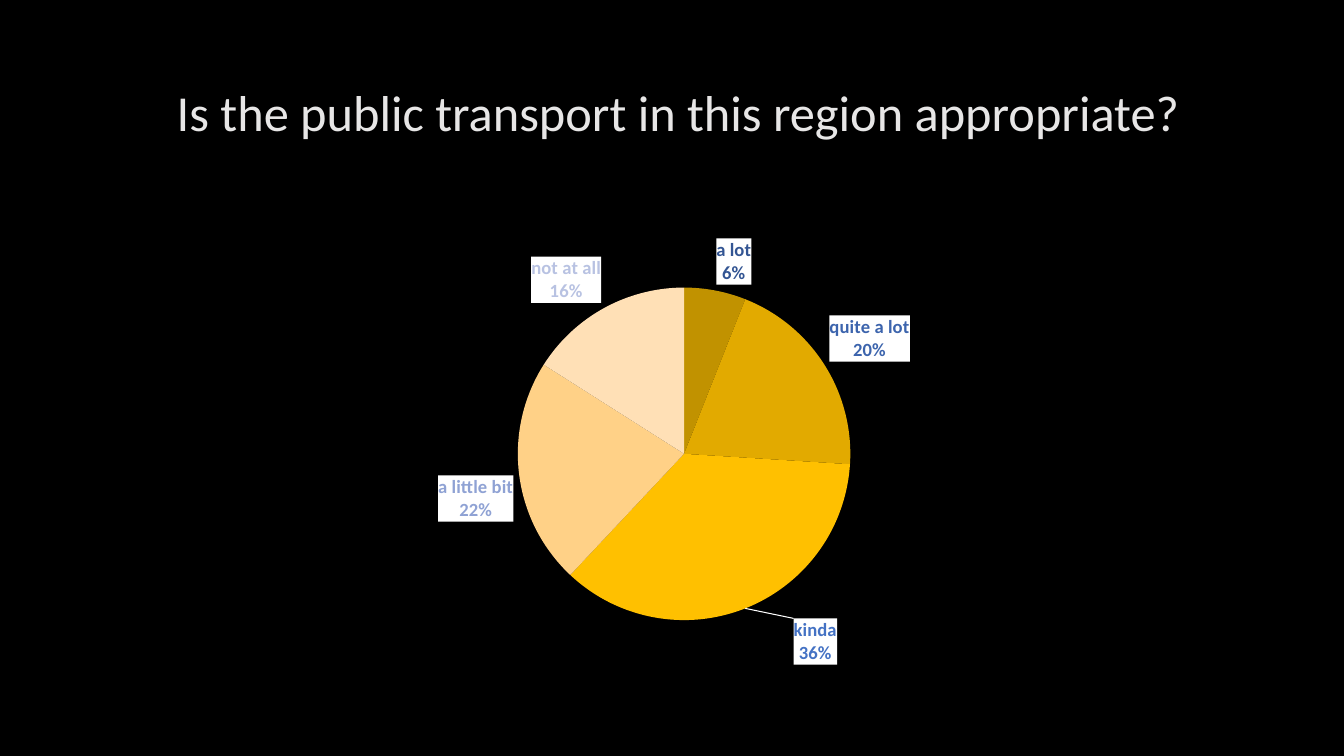
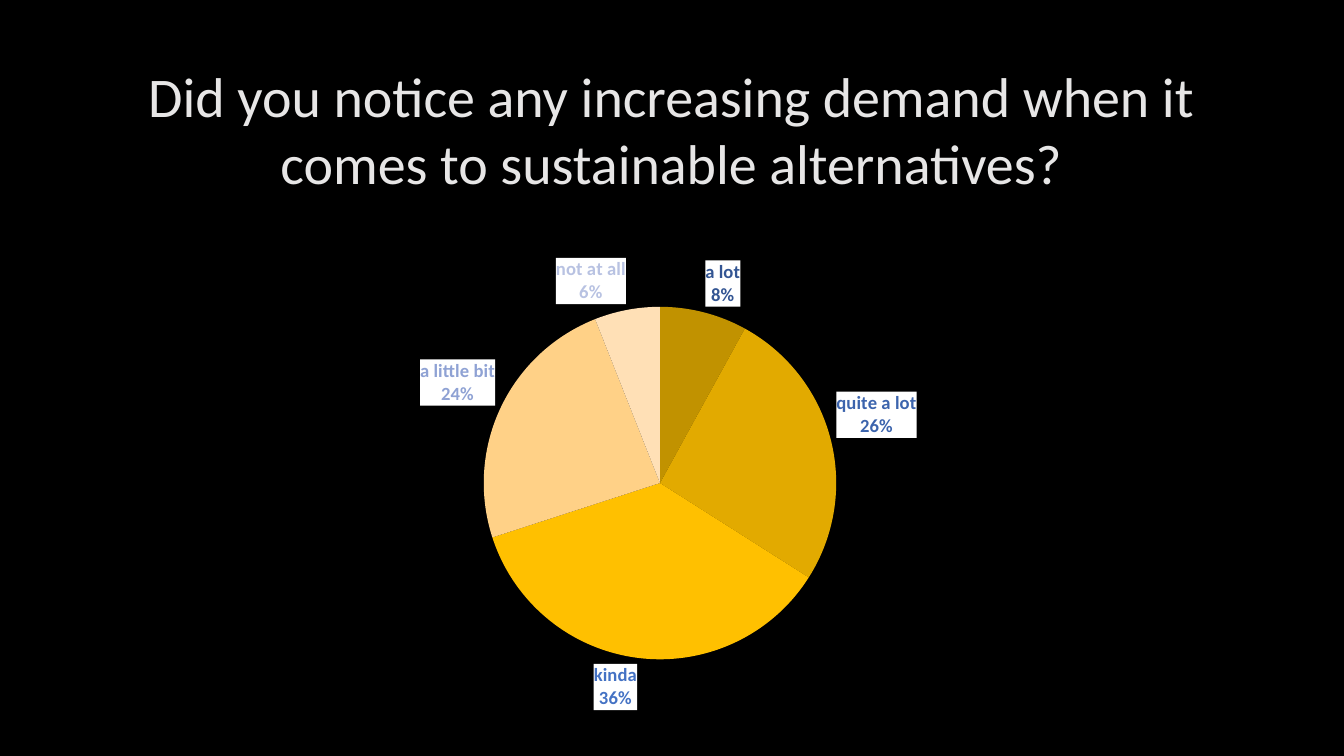
from lxml import etree
from pptx import Presentation
from pptx.chart.data import CategoryChartData
from pptx.dml.color import RGBColor
from pptx.enum.chart import XL_CHART_TYPE, XL_LABEL_POSITION
from pptx.enum.text import MSO_ANCHOR, PP_ALIGN
from pptx.oxml import parse_xml
from pptx.oxml.ns import nsdecls, qn
from pptx.util import Cm, Pt

PIE = XL_CHART_TYPE.PIE
OUTSIDE_END = XL_LABEL_POSITION.OUTSIDE_END
MIDDLE = MSO_ANCHOR.MIDDLE
CENTER = PP_ALIGN.CENTER

FONT = "Calibri"
BACKGROUND, TITLE_COLOR, WHITE = "000000", "E7E6E6", "FFFFFF"
LABEL_SIZE = 13.3

# Answer, slice colour, label colour
ANSWERS = [
    ("a lot", "C19200", "335593"),
    ("quite a lot", "E2AA00", "3C64AD"),
    ("kinda", "FFC000", "4472C4"),
    ("a little bit", "FFD187", "8FA2D4"),
    ("not at all", "FFE0B6", "B8C2E2"),
]

# Boxes are left, top, width, height in cm; pie is its left, top, width
# and height as shares of the chart box; moved shifts single labels
QUESTIONS = [
    {
        "question": "Is the public transport in this region appropriate?",
        "size": 36,
        "title_box": (2.72, 1.47, 28.75, 2.69),
        "chart_box": (2.54, 5.64, 29.11, 11.48),
        "shares": (6, 20, 36, 22, 16),
        "pie": (0.36, 0.14, 0.29, 0.73),
        "moved": {"kinda": (0.04, 0.01)},
    },
    {
        "question": "Did you notice any increasing demand when it comes to "
                    "sustainable alternatives?",
        "size": 40,
        "title_box": (2.54, 1.9, 28.75, 2.69),
        "chart_box": (2.11, 6.15, 29.64, 12.17),
        "shares": (8, 26, 36, 24, 6),
        "pie": (0.34, 0.13, 0.3, 0.73),
        "moved": {},
    },
]


def rgb(color):
    return RGBColor.from_string(color)


def style_font(font, size, color, bold=False):
    font.name = FONT
    font.size = Pt(size)
    font.bold = bold
    font.color.rgb = rgb(color)


def manual_layout(modes, **shares):
    """Layout element with the given mode tags and position shares."""
    tags = [f'<c:{tag} val="{value}"/>'
            for tag, value in [*modes.items(), *shares.items()]]
    return parse_xml(f'<c:layout {nsdecls("c")}><c:manualLayout>'
                     f'{"".join(tags)}</c:manualLayout></c:layout>')


def add_title(slide, box, question, size):
    frame = slide.shapes.add_textbox(*map(Cm, box)).text_frame
    frame.word_wrap = True
    frame.vertical_anchor = MIDDLE
    frame.text = question
    paragraph = frame.paragraphs[0]
    paragraph.alignment = CENTER
    style_font(paragraph.runs[0].font, size, TITLE_COLOR)


def show_answer_and_percent(label):
    """Show category and percentage on two lines over a white fill."""
    for tag in ("showLegendKey", "showVal", "showSerName", "showBubbleSize",
                "showCatName", "showPercent"):
        shown = tag in ("showCatName", "showPercent")
        label.find(qn(f"c:{tag}")).set("val", str(int(shown)))
    separator = etree.Element(qn("c:separator"))
    separator.text = "\n"
    last = label.find(qn("c:showBubbleSize"))
    last.addnext(separator)
    white_fill = parse_xml(
        f'<c:spPr {nsdecls("c", "a")}><a:solidFill>'
        f'<a:srgbClr val="{WHITE}"/></a:solidFill></c:spPr>')
    for old in label.findall(qn("c:spPr")):
        label.remove(old)
    label.find(qn("c:txPr")).addprevious(white_fill)


def add_leader_lines(labels):
    for old in labels.findall(qn("c:showLeaderLines")):
        labels.remove(old)
    shown = etree.SubElement(labels, qn("c:showLeaderLines"))
    shown.set("val", "1")
    labels.append(parse_xml(
        f'<c:leaderLines {nsdecls("c", "a")}><c:spPr><a:ln w="9525">'
        f'<a:solidFill><a:srgbClr val="{WHITE}"/></a:solidFill>'
        f'</a:ln></c:spPr></c:leaderLines>'))


def add_pie(slide, box, shares, pie, moved):
    data = CategoryChartData()
    data.categories = [answer for answer, _, _ in ANSWERS]
    data.add_series("Series 1", shares)
    chart = slide.shapes.add_chart(PIE, *map(Cm, box), data).chart
    chart.has_title = False
    chart.has_legend = False
    style_font(chart.font, 10, WHITE)
    plot = chart.plots[0]
    plot.vary_by_categories = True
    series = plot.series[0]

    # Place the pie inside the chart box
    area = plot._element.getparent()
    for old in area.findall(qn("c:layout")):
        area.remove(old)
    modes = {"layoutTarget": "inner", "xMode": "edge", "yMode": "edge"}
    area.insert(0, manual_layout(modes, **dict(zip("xywh", pie))))

    # Labels shared by all slices
    labels = series.data_labels
    style_font(labels.font, LABEL_SIZE, WHITE, bold=True)
    labels.position = OUTSIDE_END
    show_answer_and_percent(labels._element)
    add_leader_lines(labels._element)

    # Slices, each with a label in its own colour
    for index, (answer, slice_color, label_color) in enumerate(ANSWERS):
        point = series.points[index]
        point.format.fill.solid()
        point.format.fill.fore_color.rgb = rgb(slice_color)
        point.format.line.fill.background()
        style_font(point.data_label.font, LABEL_SIZE, label_color, bold=True)
        point.data_label.position = OUTSIDE_END
        label = labels._element.findall(qn("c:dLbl"))[index]
        show_answer_and_percent(label)
        if answer in moved:
            x, y = moved[answer]
            label.insert(1, manual_layout({}, x=x, y=y))


def add_question_slide(prs, content):
    slide = prs.slides.add_slide(prs.slide_layouts[6])
    slide.background.fill.solid()
    slide.background.fill.fore_color.rgb = rgb(BACKGROUND)
    add_title(slide, content["title_box"], content["question"],
              content["size"])
    add_pie(slide, content["chart_box"], content["shares"], content["pie"],
            content["moved"])


def main():
    prs = Presentation()
    prs.slide_width, prs.slide_height = Cm(33.87), Cm(19.05)
    for content in QUESTIONS:
        add_question_slide(prs, content)
    prs.save("out.pptx")


if __name__ == "__main__":
    main()
